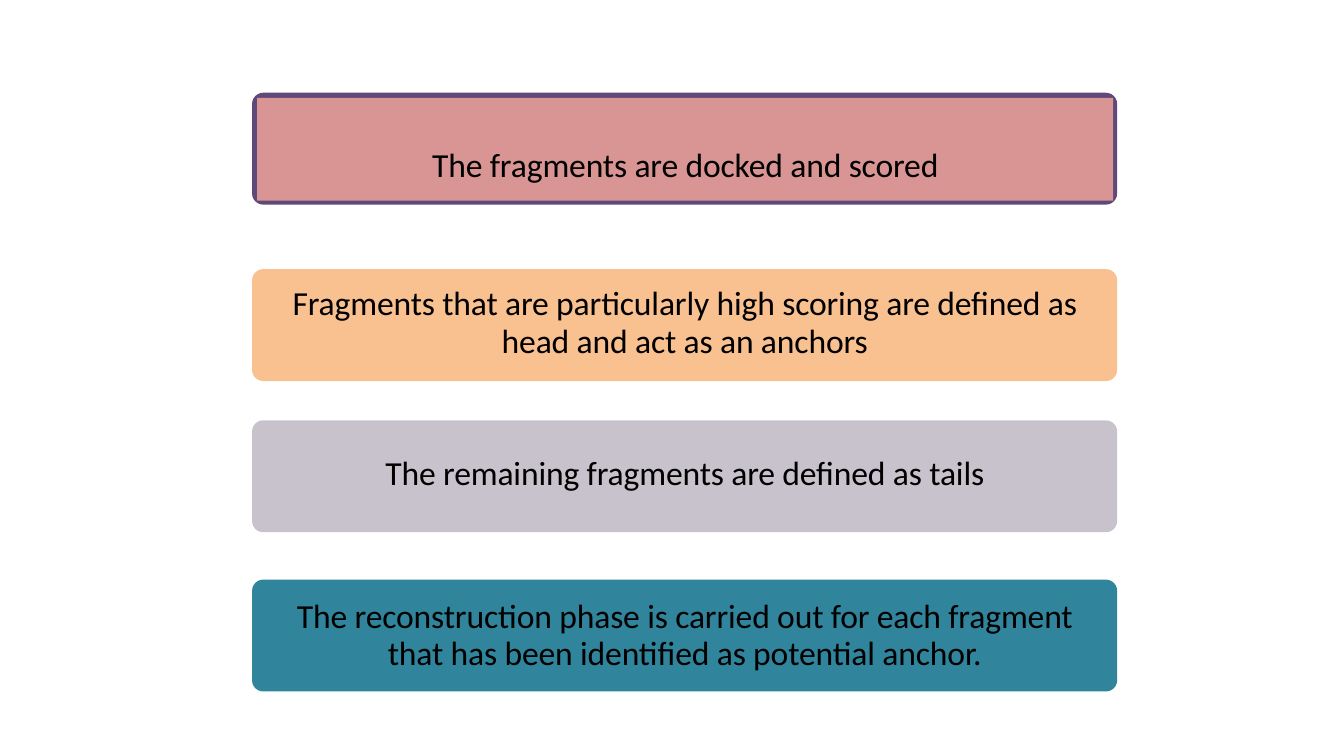
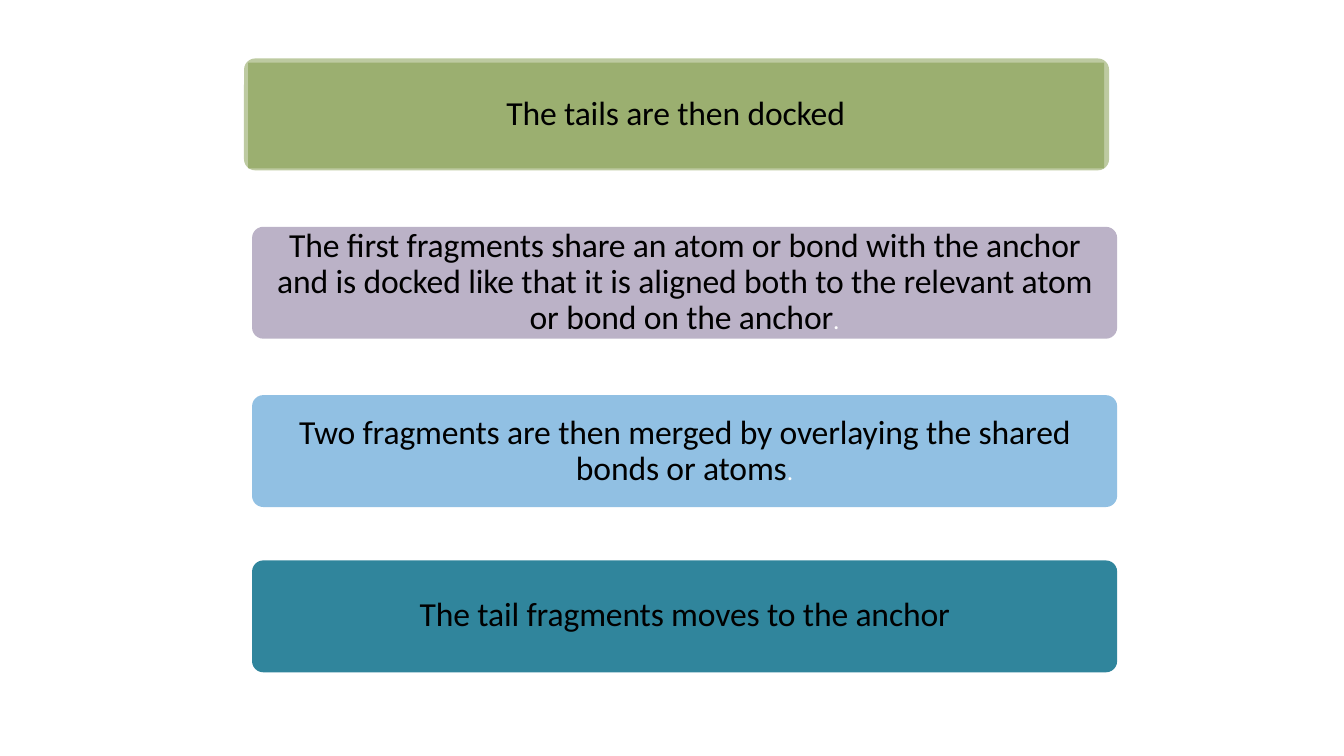
from lxml import etree
from pptx import Presentation
from pptx.dml.color import RGBColor
from pptx.enum.shapes import MSO_SHAPE
from pptx.enum.text import MSO_ANCHOR, MSO_AUTO_SIZE, PP_ALIGN
from pptx.oxml.ns import qn
from pptx.util import Inches, Pt

ROUND = MSO_SHAPE.ROUNDED_RECTANGLE
RECT = MSO_SHAPE.RECTANGLE
MIDDLE = MSO_ANCHOR.MIDDLE
CENTER = PP_ALIGN.CENTER
FIXED = MSO_AUTO_SIZE.NONE
TITLE_ONLY = 5

COLORS = {
    "ink": "000000", "white": "FFFFFF", "purple": "5F497A",
    "rose": "D99593", "peach": "F9C090", "plum": "403052",
    "teal": "30859C", "olive": "77923B", "blue": "006FC0",
}
LEFT, WIDTH, HIGH = 2.5, 8.58, 1.11
DOT = (".", "white", 18)


def color(name):
    return RGBColor.from_string(COLORS[name])


class Deck:
    """Style of the deck and the slide being built."""

    font, size, track = "Calibri", 24, "-10"

    def __init__(self):
        self.prs = Presentation()
        self.prs.slide_width = Inches(13.33)
        self.prs.slide_height = Inches(7.5)
        self.slide = None

    def start(self):
        layout = self.prs.slide_layouts[TITLE_ONLY]
        self.slide = self.prs.slides.add_slide(layout)

    def paint(self, shape, name, alpha=100):
        shape.fill.solid()
        shape.fill.fore_color.rgb = color(name)
        if alpha < 100:
            tint = next(shape.element.iter(qn("a:srgbClr")))
            etree.SubElement(tint, qn("a:alpha"), val=str(alpha * 1000))

    def box(self, kind, x, y, w, h, name, alpha=100):
        shape = self.slide.shapes.add_shape(
            kind, Inches(x), Inches(y), Inches(w), Inches(h))
        shape.shadow.inherit = False
        shape.line.fill.background()
        self.paint(shape, name, alpha)
        return shape

    def label(self, shape, lines, top=0, lift=0, lead=None):
        """Each line is a list of (text, colour, size) runs."""
        frame = shape.text_frame
        frame.word_wrap = True
        frame.auto_size = FIXED
        frame.vertical_anchor = MIDDLE
        frame.margin_left = frame.margin_right = 0
        frame.margin_top, frame.margin_bottom = Inches(top), Inches(lift)
        para = frame.paragraphs[0]
        para.alignment = CENTER
        para.line_spacing = lead
        for i, line in enumerate(lines):
            if i:
                para.add_line_break()
            for text, name, size in line:
                run = para.add_run()
                run.text = text
                run.font.name = self.font
                run.font.size = Pt(size)
                run.font.color.rgb = color(name)
        for props in shape.element.iter(qn("a:rPr")):
            props.set("spc", self.track)

    def plain(self, *lines):
        return [[(text, "ink", self.size)] for text in lines]

    def bar(self, y, name, lines=(), alpha=100, x=LEFT, **style):
        shape = self.box(ROUND, x, y, WIDTH, HIGH, name, alpha)
        shape.adjustments[0] = 0.1
        if lines:
            self.label(shape, lines, **style)

    def title(self, text, x, y, w, h, fill=None, top=0):
        shape = self.slide.shapes.title
        shape.left, shape.top = Inches(x), Inches(y)
        shape.width, shape.height = Inches(w), Inches(h)
        if fill:
            self.paint(shape, fill)
        self.label(shape, self.plain(text), top=top)
        # Bring the title in front of its bar
        self.slide.shapes.element.append(shape.element)


def main():
    deck = Deck()

    # Docking the fragments
    deck.start()
    deck.bar(0.92, "purple")
    deck.title("The fragments are docked and scored",
               2.55, 0.97, 8.49, 1.02, fill="rose", top=0.3)
    deck.bar(2.67, "peach", deck.plain(
        "Fragments that are particularly high scoring are defined as",
        "head and act as an anchors"), lift=0.06, lead=Pt(27.4))
    deck.bar(4.17, "plum", deck.plain(
        "The remaining fragments are defined as tails"),
        alpha=29, lift=0.09)
    deck.bar(5.75, "teal", deck.plain(
        "The reconstruction phase is carried out for each fragment",
        "that has been identified as potential anchor."), lead=Pt(25.9))

    # Docking the tails
    deck.start()
    deck.bar(0.58, "olive", alpha=48, x=2.42)
    deck.box(RECT, 2.46, 0.62, 8.49, 1.05, "olive", 48)
    deck.title("The tails are then docked", 4.9, 0.9, 3.6, 0.43)
    share = deck.plain(
        "The first fragments share an atom or bond with the anchor",
        "and is docked like that it is aligned both to the relevant atom",
        "or bond on the anchor")
    share[-1].append(DOT)
    deck.bar(2.25, "purple", share, alpha=42, lead=0.9)
    merge = deck.plain(
        "Two fragments are then merged by overlaying the shared",
        "bonds or atoms")
    merge[-1].append(DOT)
    deck.bar(3.92, "blue", merge, alpha=43, lead=Pt(25.9))
    deck.bar(5.56, "teal", deck.plain(
        "The tail fragments moves to the anchor"), lift=0.06)

    deck.prs.save("out.pptx")


if __name__ == "__main__":
    main()
